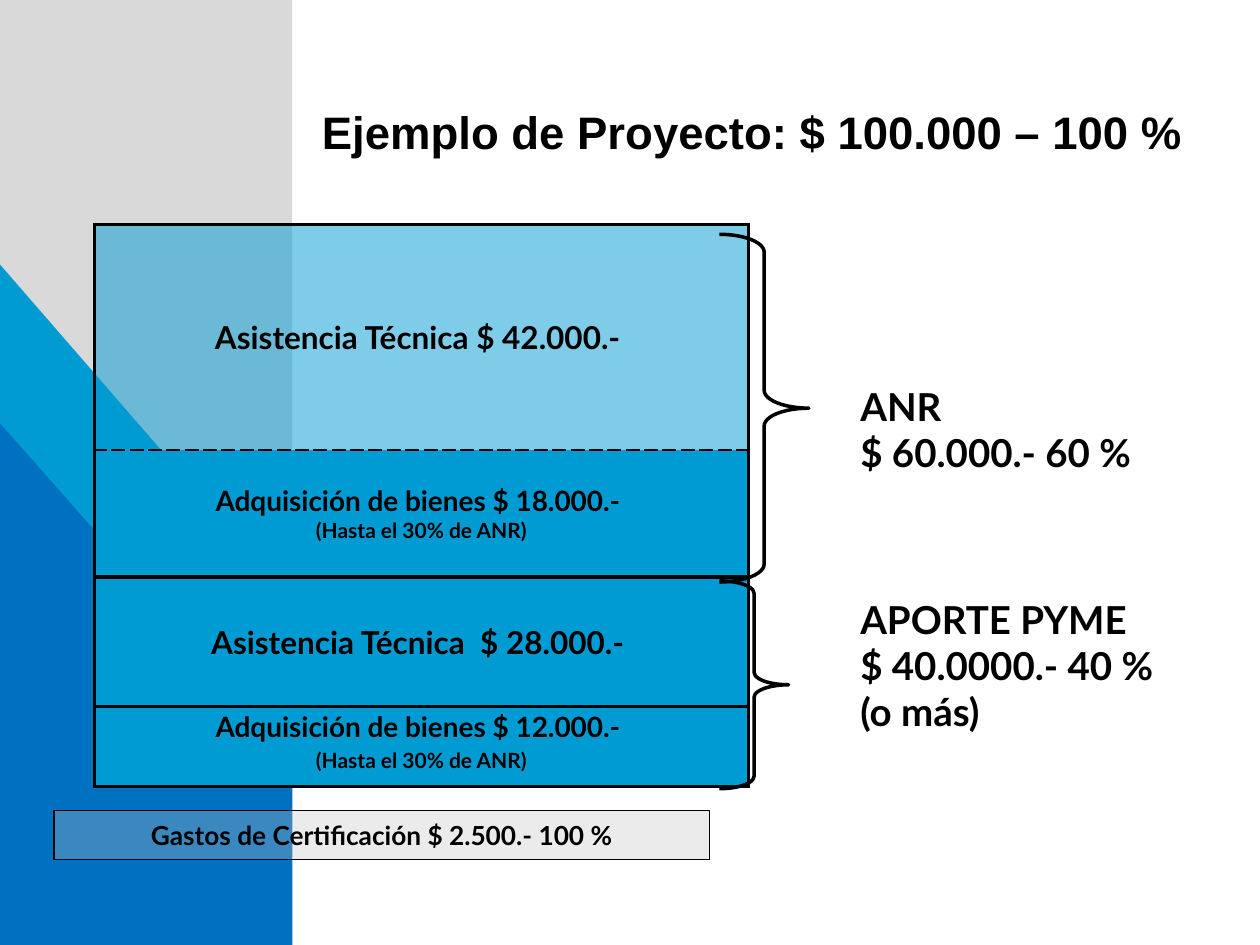
from lxml.etree import SubElement
from pptx import Presentation
from pptx.dml.color import RGBColor
from pptx.enum.shapes import MSO_SHAPE
from pptx.enum.text import MSO_ANCHOR, PP_ALIGN
from pptx.oxml import parse_xml
from pptx.oxml.ns import nsdecls, qn
from pptx.util import Inches, Pt

BLACK, WHITE, GREY, SILVER = "000000", "FFFFFF", "D9D9D9", "C0C0C0"
LIGHT_BLUE, DARK_BLUE = "009BD2", "0070C0"

ROWS = [
    (1.79, [("Asistencia Técnica $ 42.000.- ", 18)]),
    (1.01, [("Adquisición de bienes $ 18.000.- ", 16), ("(Hasta el 30% de ANR)", 12)]),
    (1.03, [("Asistencia Técnica  $ 28.000.- ", 18)]),
    (0.63, [("Adquisición de bienes $ 12.000.- ", 16), ("(Hasta el 30% de ANR)", 12)]),
]
SIDE_BORDERS = [2.25, 2.25, 2, 2]
LEVEL_BORDERS = [(2.25, "solid"), (1, "sysDash"), (2.25, "solid"), (2, "solid"), (2, "solid")]


def color(hex_value):
    """Turn a hex string into a colour."""
    return RGBColor.from_string(hex_value)


def set_fill(fill, hex_value, opacity=100):
    """Give a solid fill with an opacity in percent."""
    fill.solid()
    fill.fore_color.rgb = color(hex_value)
    if opacity < 100:
        scheme = fill._xPr.find(qn("a:solidFill"))[0]
        SubElement(scheme, qn("a:alpha"), val=str(opacity * 1000))


def write_text(text_frame, lines, alignment, font="Lato"):
    """Write bold black lines, each given with its size in points."""
    text_frame.word_wrap = True
    text_frame.text = "\n".join(text for text, _ in lines)
    for paragraph, (_, size) in zip(text_frame.paragraphs, lines):
        paragraph.alignment = alignment
        for run in paragraph.runs:
            run.font.name = font
            run.font.size = Pt(size)
            run.font.bold = True
            run.font.color.rgb = color(BLACK)


def add_shape(slide, kind, box, fill=None, opacity=100, line_width=None):
    """Add a preset shape with an optional fill and black outline."""
    shape = slide.shapes.add_shape(kind, *map(Inches, box))
    shape.shadow.inherit = False
    if fill:
        set_fill(shape.fill, fill, opacity)
    else:
        shape.fill.background()
    if line_width:
        shape.line.color.rgb = color(BLACK)
        shape.line.width = Pt(line_width)
    else:
        shape.line.fill.background()
    return shape


def add_brace(slide, box, curve):
    """Add a right brace with the given curvature."""
    brace = add_shape(slide, MSO_SHAPE.RIGHT_BRACE, box, line_width=2)
    brace.adjustments[0] = curve


def add_label(slide, box, texts):
    """Add a left-aligned label beside a brace."""
    label = slide.shapes.add_textbox(*map(Inches, box))
    write_text(label.text_frame, [(text, 22) for text in texts], PP_ALIGN.LEFT)


def set_borders(cell, side, top, bottom):
    """Draw the four black borders of a cell."""
    edges = [("lnL", (side, "solid")), ("lnR", (side, "solid")), ("lnT", top), ("lnB", bottom)]
    properties = cell._tc.get_or_add_tcPr()
    for index, (tag, (width, dash)) in enumerate(edges):
        properties.insert(index, parse_xml(
            f'<a:{tag} {nsdecls("a")} w="{Pt(width)}"><a:solidFill><a:srgbClr val="{BLACK}"/>'
            f'</a:solidFill><a:prstDash val="{dash}"/></a:{tag}>'))


def add_budget_table(slide):
    """Add the one-column table of project costs."""
    height = sum(row_height for row_height, _ in ROWS)
    box = map(Inches, (0.75, 1.78, 5.19, height))
    table = slide.shapes.add_table(len(ROWS), 1, *box).table
    table.first_row = table.horz_banding = False
    for index, (row_height, lines) in enumerate(ROWS):
        table.rows[index].height = Inches(row_height)
        cell = table.cell(index, 0)
        cell.vertical_anchor = MSO_ANCHOR.MIDDLE
        write_text(cell.text_frame, lines, PP_ALIGN.CENTER)
        set_fill(cell.fill, LIGHT_BLUE, 50 if index == 0 else 100)
        set_borders(cell, SIDE_BORDERS[index], *LEVEL_BORDERS[index:index + 2])
    last_cell = table.cell(len(ROWS) - 1, 0)
    last_cell.margin_top, last_cell.margin_bottom = Inches(0), Inches(0.08)
    last_cell.text_frame.paragraphs[1].space_before = Pt(2)


def add_background(slide):
    """Draw the coloured band at the left."""
    add_shape(slide, MSO_SHAPE.RECTANGLE, (0, 0, 2.32, 7.5), GREY)
    add_shape(slide, MSO_SHAPE.RIGHT_TRIANGLE, (0, 2.1, 4.69, 5.4), LIGHT_BLUE)
    add_shape(slide, MSO_SHAPE.RIGHT_TRIANGLE, (0, 3.36, 3.66, 4.14), DARK_BLUE)
    add_shape(slide, MSO_SHAPE.RECTANGLE, (2.32, 0, 7.68, 7.5), WHITE)


def add_title(slide, text):
    """Place the title above the background shapes."""
    title = slide.shapes.title
    title.left, title.top, title.width, title.height = map(Inches, (2.4, 0.52, 7.09, 0.79))
    title.text_frame.vertical_anchor = MSO_ANCHOR.BOTTOM
    write_text(title.text_frame, [(text, 26)], PP_ALIGN.RIGHT, "Arial")
    slide.shapes._spTree.append(title._element)


def add_certification(slide):
    """Add the bar of certification costs."""
    bar = add_shape(slide, MSO_SHAPE.RECTANGLE, (0.43, 6.43, 5.2, 0.39), SILVER, 31, 0.75)
    bar.text_frame.vertical_anchor = MSO_ANCHOR.MIDDLE
    write_text(bar.text_frame, [("Gastos de Certificación $ 2.500.- 100 %", 15)], PP_ALIGN.CENTER)


def main():
    """Build the slide and save it."""
    presentation = Presentation()
    presentation.slide_width, presentation.slide_height = Inches(10), Inches(7.5)
    slide = presentation.slides.add_slide(presentation.slide_layouts[5])
    add_background(slide)
    add_title(slide, "Ejemplo de Proyecto: $ 100.000 – 100 %")
    add_budget_table(slide)
    add_brace(slide, (5.71, 1.86, 0.71, 2.76), 0.2)
    add_label(slide, (6.73, 2.99, 2.52, 0.83), ["ANR", "$ 60.000.- 60 %"])
    add_brace(slide, (5.71, 4.61, 0.55, 1.65), 0.18)
    add_label(slide, (6.73, 4.68, 2.84, 1.2), ["APORTE PYME", "$ 40.0000.- 40 %", "(o más)"])
    add_certification(slide)
    presentation.save("out.pptx")


if __name__ == "__main__":
    main()
